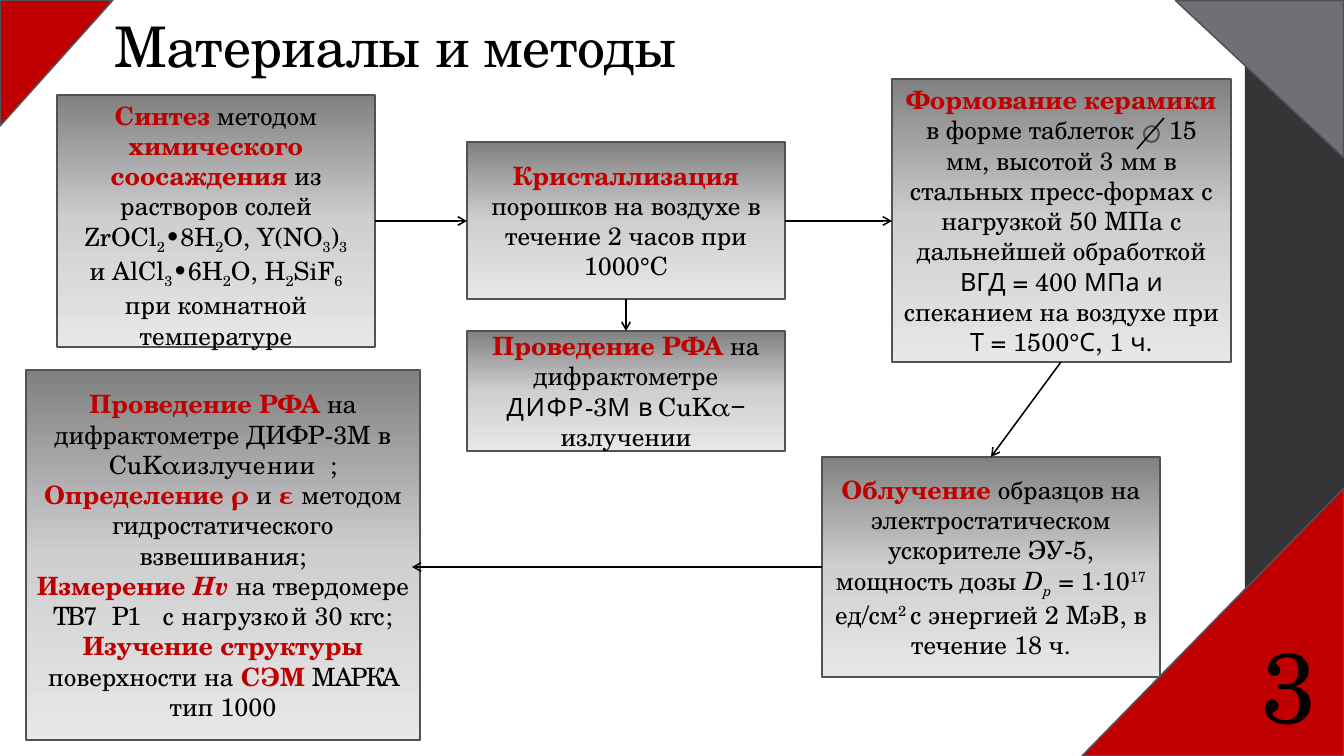
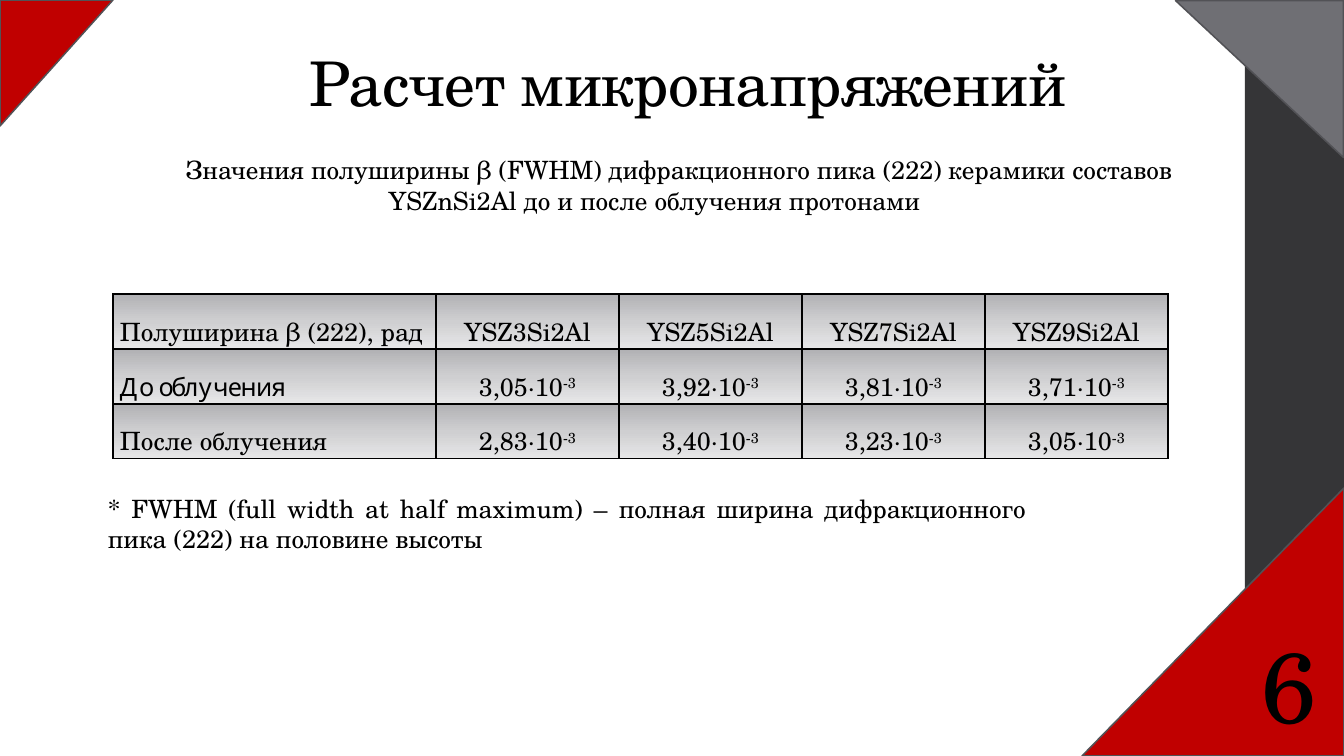
from pptx import Presentation
from pptx.dml.color import RGBColor
from pptx.enum.shapes import MSO_CONNECTOR, MSO_SHAPE
from pptx.enum.text import MSO_ANCHOR, PP_ALIGN
from pptx.oxml.ns import qn
from pptx.util import Emu, Pt
from lxml.etree import SubElement

FONT = "TeX Gyre Schola"
BLACK = RGBColor(0x00, 0x00, 0x00)
WHITE = RGBColor(0xFF, 0xFF, 0xFF)
RED = RGBColor(0xC0, 0x00, 0x00)
DARK = RGBColor(0x35, 0x35, 0x37)
GRAY = RGBColor(0x6F, 0x6F, 0x74)
OUTLINE = RGBColor(0x52, 0x52, 0x56)
MID = RGBColor(0xCF, 0xCF, 0xD1)
LIGHT = RGBColor(0xE7, 0xE7, 0xE8)
BOX_STOPS = (RGBColor(0x80, 0x80, 0x80), MID, LIGHT)
CELL_STOPS = (RGBColor(0xB1, 0xB1, 0xB4), MID, LIGHT)

# Run styles, combined as letters
KEY, ITALIC, SUB, SUP, GAP = "k", "i", "-", "+", "w"


def px(*values):
    """Turn px into EMU; the slide is 1344 px wide."""
    return [Emu(round(v * 12192000 / 1344)) for v in values]


# Text
def add_runs(p, runs, size=18, align=PP_ALIGN.LEFT, spacing=None, kern=None):
    """Fill a paragraph from a string or from (text, style) pairs."""
    p.alignment = align
    p.font.name, p.font.size = FONT, Pt(size)
    if spacing:
        p.line_spacing = spacing
    for text, style in [(runs, "")] if isinstance(runs, str) else runs:
        if text == "\n":
            p.add_line_break()
            continue
        r = p.add_run()
        r.text = text
        r.font.color.rgb = RED if KEY in style else BLACK
        r.font.bold = True if KEY in style else None
        r.font.italic = True if ITALIC in style else None
        rPr = r.font._element
        if SUB in style or SUP in style:
            rPr.set("baseline", "-25000" if SUB in style else "30000")
        if GAP in style:
            rPr.set("spc", "2000")
        elif kern:
            rPr.set("spc", str(kern))


def add_text(slide, at, text, anchor=MSO_ANCHOR.TOP, indent=0, **style):
    tf = slide.shapes.add_textbox(*px(*at)).text_frame
    tf.word_wrap = True
    tf.vertical_anchor = anchor
    p = tf.paragraphs[0]
    add_runs(p, text, **style)
    if indent:
        p._p.get_or_add_pPr().set("indent", str(px(indent)[0]))


def add_title(slide, at, text, size):
    add_text(slide, at, text, MSO_ANCHOR.BOTTOM, size=size, spacing=0.9, kern=-50)


# Shapes
def set_gradient(fill, props, stops):
    """Fill from top to bottom with evenly spaced stops."""
    fill.gradient()
    fill.gradient_angle = 270
    gs_list = props.find(qn("a:gradFill")).find(qn("a:gsLst"))
    for gs in list(gs_list):
        gs_list.remove(gs)
    for i, color in enumerate(stops):
        gs = SubElement(gs_list, qn("a:gs"), pos=str(100000 * i // (len(stops) - 1)))
        SubElement(gs, qn("a:srgbClr"), val=str(color))


def add_shape(slide, kind, at, color=None, line=OUTLINE, width=1.1):
    sp = slide.shapes.add_shape(kind, *px(*at))
    sp.shadow.inherit = False
    if color is None:
        sp.fill.background()
    else:
        sp.fill.solid()
        sp.fill.fore_color.rgb = color
    if line is None:
        sp.line.fill.background()
    else:
        sp.line.color.rgb = line
        sp.line.width = Pt(width)
    return sp


def add_corner(slide, at, color, rotation=0):
    sp = add_shape(slide, MSO_SHAPE.ISOSCELES_TRIANGLE, at, color)
    sp.adjustments[0] = 1
    sp.rotation = rotation


def add_box(slide, at, paragraphs, anchor=MSO_ANCHOR.MIDDLE):
    sp = add_shape(slide, MSO_SHAPE.RECTANGLE, at)
    set_gradient(sp.fill, sp._element.spPr, BOX_STOPS)
    tf = sp.text_frame
    tf.word_wrap = True
    tf.vertical_anchor = anchor
    for i, runs in enumerate(paragraphs):
        p = tf.add_paragraph() if i else tf.paragraphs[0]
        add_runs(p, runs, align=PP_ALIGN.CENTER)


def add_line(slide, ends, arrow=True):
    cn = slide.shapes.add_connector(MSO_CONNECTOR.STRAIGHT, *px(*ends))
    cn.line.color.rgb = BLACK
    cn.line.width = Pt(1.1)
    if arrow:
        SubElement(cn.line._get_or_add_ln(), qn("a:tailEnd"), type="arrow")
    SubElement(cn._element.spPr, qn("a:effectLst"))


# Table
def add_cell(cell, runs, align):
    tcPr = cell._tc.get_or_add_tcPr()
    for side in ("a:lnL", "a:lnR", "a:lnT", "a:lnB"):
        ln = SubElement(tcPr, qn(side), w=str(Pt(1)))
        SubElement(SubElement(ln, qn("a:solidFill")), qn("a:srgbClr"), val=str(BLACK))
    set_gradient(cell.fill, tcPr, CELL_STOPS)
    cell.margin_left, cell.margin_right, cell.margin_top, cell.margin_bottom = px(7, 7, 0, 0)
    add_runs(cell.text_frame.paragraphs[0], runs, align=align, spacing=1.5)


def add_data_table(slide, left, top, widths, row_height, rows):
    frame = slide.shapes.add_table(
        len(rows), len(widths),
        *px(left, top, sum(widths), row_height * len(rows)))
    table = frame.table
    for column, width in zip(table.columns, px(*widths)):
        column.width = width
    for i, row in enumerate(rows):
        for j, runs in enumerate(row):
            add_cell(table.cell(i, j), runs, PP_ALIGN.CENTER if j else PP_ALIGN.JUSTIFY)


# Shared frame: side band, corners and slide number
def add_slide(prs, number):
    slide = prs.slides.add_slide(prs.slide_layouts[6])
    slide.background.fill.solid()
    slide.background.fill.fore_color.rgb = WHITE
    add_shape(slide, MSO_SHAPE.RECTANGLE, (1245, 0, 99, 756), DARK, line=None)
    add_corner(slide, (1082, 488, 262, 268), RED)
    add_corner(slide, (0, 0, 113, 126), RED, 180)
    add_corner(slide, (1181, -5, 157, 168), GRAY, 270)
    add_text(slide, (1252, 632, 92, 116), str(number), MSO_ANCHOR.BOTTOM,
             size=71, spacing=0.8, kern=-50)
    return slide


def build_methods(prs):
    slide = add_slide(prs, 3)
    add_title(slide, (105, 0, 1069, 85), "Материалы и методы", 40)

    # Process steps
    add_box(slide, (57, 95, 318, 252), [[
        ("Синтез", KEY), (" методом ", ""), ("химического соосаждения ", KEY),
        ("из растворов солей ZrOCl", ""), ("2", SUB), ("•8H", ""), ("2", SUB),
        ("O, Y(NO", ""), ("3", SUB), (")", ""), ("3", SUB), ("\n", ""),
        ("и AlCl", ""), ("3", SUB), ("•6H", ""), ("2", SUB), ("O, H", ""),
        ("2", SUB), ("SiF", ""), ("6 ", SUB), ("при комнатной температуре", ""),
    ]], MSO_ANCHOR.TOP)
    add_box(slide, (26, 370, 394, 370), [
        [("Проведение РФА", KEY), (" на дифрактометре ДИФР-3М в CuKα‒излучении;", "")],
        [("Определение ρ", KEY), (" и ", ""), ("ε", KEY),
         (" методом гидростатического взвешивания;", "")],
        [("Измерение ", KEY), ("Hv", KEY + ITALIC),
         (" на твердомере ТВ‒7Р‒1 с нагрузкой 30 кгс;", "")],
        [("Изучение структуры ", KEY), ("поверхности на ", ""), ("СЭМ", KEY),
         (" МАРКА тип 1000", "")],
    ])
    add_box(slide, (467, 142, 318, 157), [[
        ("Кристаллизация", KEY),
        (" порошков на воздухе в течение 2 часов при 1000°С", "")]])
    add_box(slide, (467, 331, 318, 120), [[
        ("Проведение РФА", KEY), (" на дифрактометре", ""), ("\n", ""),
        ("ДИФР-3М в CuKα‒излучении", "")]])
    add_box(slide, (822, 457, 338, 220), [[
        ("Облучение", KEY),
        (" образцов на электростатическом ускорителе ЭУ-5, мощность дозы ", ""),
        ("D", ITALIC), ("p", ITALIC + SUB), (" = 1∙10", ""), ("17 ", SUP),
        ("ед/см", ""), ("2 ", SUP), ("с энергией 2 МэВ, в течение 18 ч.", "")]])
    add_box(slide, (892, 79, 339, 283), [[
        ("Формование керамики ", KEY), ("в форме таблеток", ""), (" ", GAP),
        ("15 мм, высотой 3 мм в стальных пресс-формах с нагрузкой 50 МПа "
         "с дальнейшей обработкой ВГД = 400 МПа и спеканием на воздухе "
         "при Т = 1500°С, 1 ч.", "")]])

    # Diameter sign
    add_shape(slide, MSO_SHAPE.OVAL, (1144, 126, 15, 16), width=1.5)
    add_line(slide, (1164, 118, 1137, 149), arrow=False)

    # Arrows between steps
    for ends in ((375, 221, 467, 221), (626, 299, 626, 331), (785, 221, 892, 221),
                 (822, 567, 412, 567), (1061, 362, 991, 457)):
        add_line(slide, ends)


def build_microstrain(prs):
    slide = add_slide(prs, 6)
    add_title(slide, (300, 55, 824, 70), "Расчет микронапряжений", 44)
    add_text(slide, (101, 149, 1107, 72),
             "Значения полуширины β (FWHM) дифракционного пика (222) керамики "
             "составов YSZnSi2Al до и после облучения протонами",
             MSO_ANCHOR.MIDDLE, indent=49, align=PP_ALIGN.CENTER)

    # Half-widths, in units of 10⁻³ rad
    header = ["Полуширина β (222), рад"] + [f"YSZ{n}Si2Al" for n in (3, 5, 7, 9)]
    half_widths = {
        "До облучения": ("3,05", "3,92", "3,81", "3,71"),
        "После облучения": ("2,83", "3,40", "3,23", "3,05"),
    }
    rows = [header] + [
        [name] + [[(f"{value}·10", ""), ("-3", SUP)] for value in values]
        for name, values in half_widths.items()]
    add_data_table(slide, 113, 294, [323] + [183] * 4, 55, rows)

    add_text(slide, (98, 488, 938, 72),
             "* FWHM (full width at half maximum) – полная ширина "
             "дифракционного пика (222) на половине высоты",
             align=PP_ALIGN.JUSTIFY)


def main():
    prs = Presentation()
    prs.slide_width, prs.slide_height = px(1344, 756)
    build_methods(prs)
    build_microstrain(prs)
    prs.save("out.pptx")


if __name__ == "__main__":
    main()
